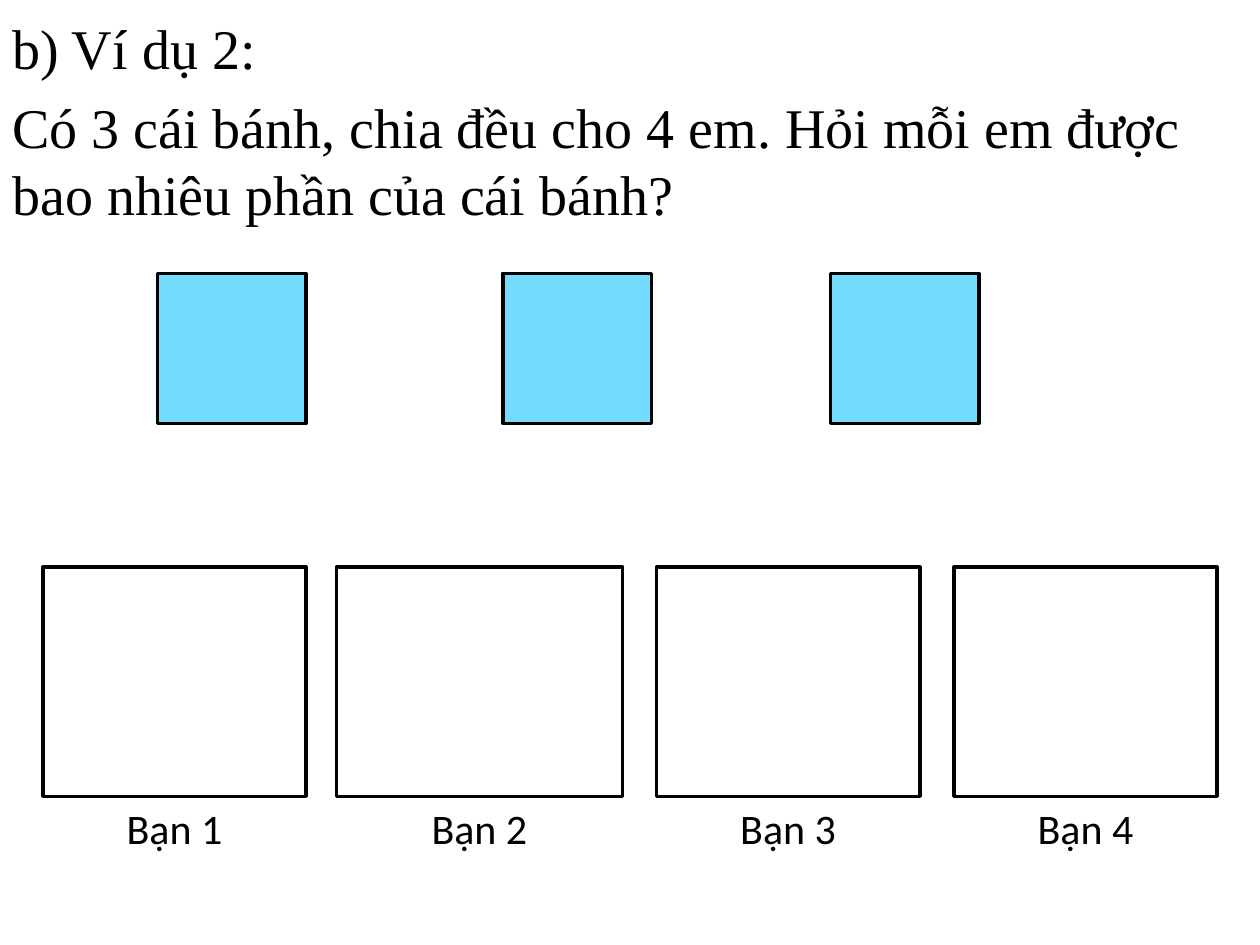
import pptx
import pptx.util
from dataclasses import dataclass
from pptx.dml.color import RGBColor
from pptx.enum.shapes import MSO_SHAPE
from pptx.enum.text import PP_ALIGN
from pptx.util import Inches


@dataclass(frozen=True)
class Theme:
    ink: str = "000000"
    cake: str = "75DBFF"
    body_font: str = "Times New Roman"
    label_font: str = "Calibri"
    body_size: int = 32
    label_size: int = 24
    line_width: int = 2


THEME = Theme()


def add_text(shapes, box, lines, font, size, align=PP_ALIGN.LEFT, gap=0, inset=0.05):
    sp = shapes.add_textbox(*map(Inches, box))
    tf = sp.text_frame
    tf.word_wrap = True
    tf.margin_top = Inches(inset)
    for i, line in enumerate(lines):
        p = tf.paragraphs[0] if i == 0 else tf.add_paragraph()
        p.alignment = align
        if i:
            p.space_before = pptx.util.Pt(gap)
        r = p.add_run()
        r.text = line
        r.font.name = font
        r.font.size = pptx.util.Pt(size)
        r.font.color.rgb = RGBColor.from_string(THEME.ink)
    return sp


def add_rect(shapes, box, fill=None):
    sp = shapes.add_shape(MSO_SHAPE.RECTANGLE, *map(Inches, box))
    sp.shadow.inherit = False
    if fill:
        sp.fill.solid()
        sp.fill.fore_color.rgb = RGBColor.from_string(fill)
    else:
        sp.fill.background()
    sp.line.color.rgb = RGBColor.from_string(THEME.ink)
    sp.line.width = pptx.util.Pt(THEME.line_width)
    return sp


def add_problem(s, box):
    lines = ["b) Ví dụ 2:",
             "Có 3 cái bánh, chia đều cho 4 em. Hỏi mỗi em được bao nhiêu phần của cái bánh?"]
    add_text(s.shapes, box, lines, THEME.body_font, THEME.body_size,
             gap=0.2 * THEME.body_size, inset=0.11)


def add_cake(s, box):
    add_rect(s.shapes, box, fill=THEME.cake)


def add_friend(s, box, name):
    x, y, w, h = box
    label_h = 0.69
    group = s.shapes.add_group_shape()
    add_rect(group.shapes, (x, y, w, h - label_h))
    add_text(group.shapes, (x, y + h - label_h, w, label_h), [name],
             THEME.label_font, THEME.label_size, align=PP_ALIGN.CENTER)


def main():
    prs = pptx.Presentation()
    prs.slide_width, prs.slide_height = Inches(10), Inches(7.5)
    s = prs.slides.add_slide(prs.slide_layouts[6])

    # Problem statement
    add_problem(s, (0, 0, 10, 1.92))

    # Friends, each with an empty plate and a name
    for i, (x, w) in enumerate([(0.34, 2.09), (2.67, 2.27), (5.21, 2.09), (7.57, 2.09)], 1):
        add_friend(s, (x, 4.5, w, 2.51), f"Bạn {i}")

    # Cakes to share
    for x in (1.25, 3.99, 6.59):
        add_cake(s, (x, 2.17, 1.18, 1.19))

    prs.save("out.pptx")


if __name__ == "__main__":
    main()
